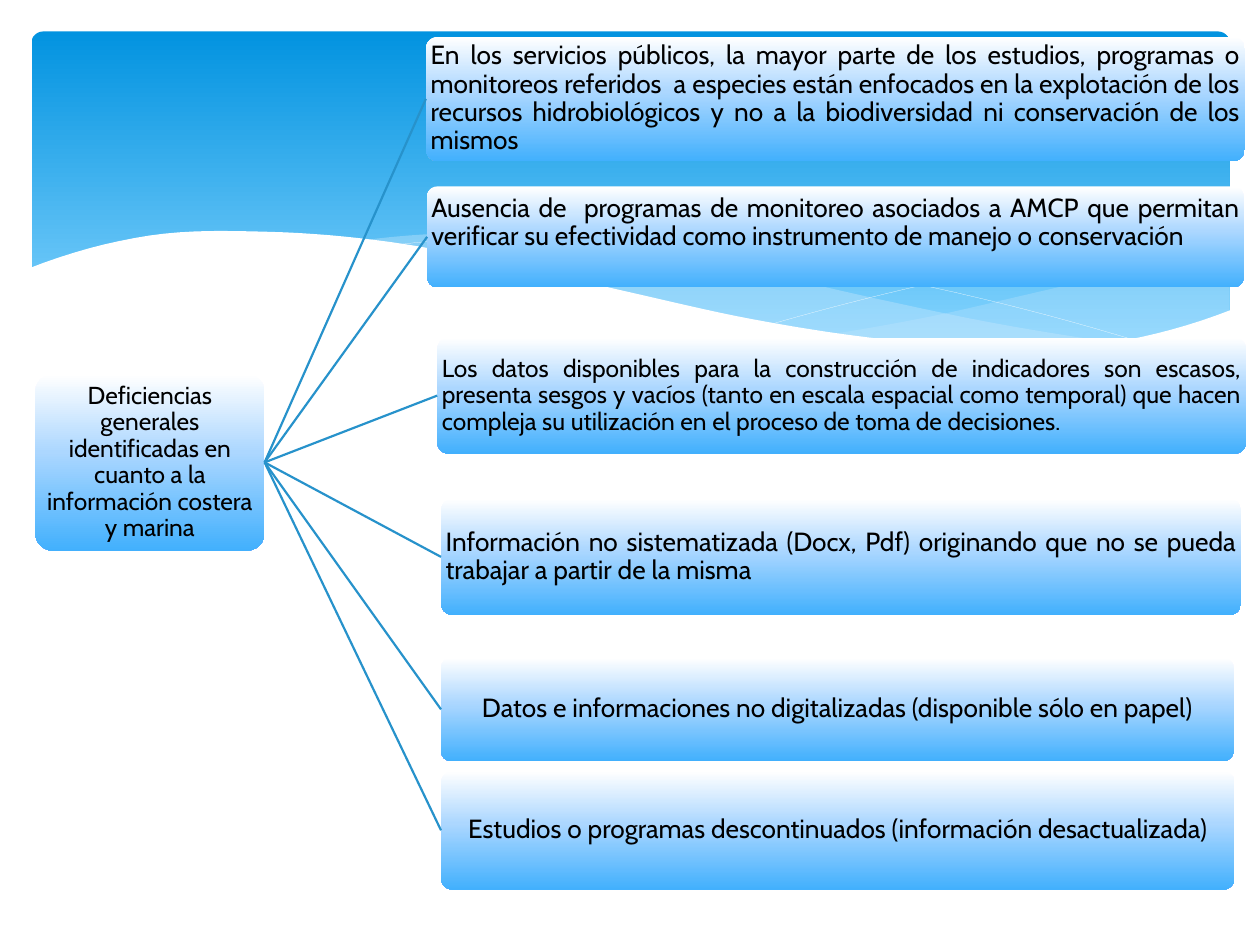
from copy import deepcopy

from lxml.etree import SubElement
from pptx import Presentation
from pptx.dml.color import RGBColor
from pptx.enum.shapes import MSO_CONNECTOR, MSO_SHAPE
from pptx.enum.text import MSO_ANCHOR, PP_ALIGN
from pptx.oxml.ns import qn
from pptx.util import Inches, Pt

THEME = {
    "header": [(0, "0293E0"), (0.9, "83D3FE")],
    "box": [(0, "FFFFFF"), (0.44, "ACD7FF"), (1, "42B0FD")],
    "wave": RGBColor.from_string("C6E7FC"),
    "white": RGBColor.from_string("FFFFFF"),
    "connector": RGBColor.from_string("2792CB"),
    "text": RGBColor.from_string("000000"),
    "font": "Cabin",
    "small": Pt(14),
    "large": Pt(15),
}
RIGHT_SIDE, LEFT_SIDE = 3, 1  # connection sites of a rectangle
STEPS = 8  # short lines drawn between two neighbouring heights of a wave

presentation = Presentation()
presentation.slide_width, presentation.slide_height = Inches(10), Inches(7.5)
slide = presentation.slides.add_slide(presentation.slide_layouts[6])


def add_gradient_box(bounds, corner, stops):
    """Add a rounded rectangle with a gradient running from top to bottom."""
    shape = slide.shapes.add_shape(MSO_SHAPE.ROUNDED_RECTANGLE, *map(Inches, bounds))
    shape.adjustments[0] = corner
    shape.shadow.inherit = False
    shape.line.fill.background()
    shape.fill.gradient()
    shape.fill.gradient_angle = 270
    # A new gradient has two stops: add the missing ones
    stop_list = shape._element.spPr.find(qn("a:gradFill")).find(qn("a:gsLst"))
    for _ in stops[2:]:
        stop_list.append(deepcopy(stop_list[-1]))
    for stop, (position, color) in zip(shape.fill.gradient_stops, stops):
        stop.position = position
        stop.color.rgb = RGBColor.from_string(color)
    return shape


def add_wave(left, right, upper, lower=()):
    """Draw a smooth edge through evenly spaced heights; a lower edge closes it."""
    outline = []
    for heights, start, end in [(upper, left, right), (lower[::-1], right, left)]:
        if not heights:
            continue
        # Extend both ends, so that every interval has a neighbour on each side
        first = 3 * heights[0] - 3 * heights[1] + heights[2] if len(heights) > 2 else heights[0]
        last = 3 * heights[-1] - 3 * heights[-2] + heights[-3] if len(heights) > 2 else heights[-1]
        padded = [first, *heights, last]
        intervals = len(heights) - 1
        for step in range(intervals * STEPS + 1):
            index = min(step // STEPS, intervals - 1)
            t = step / STEPS - index
            a, b, c, d = padded[index:index + 4]
            # Catmull-Rom spline from height b to height c
            y = b + t / 2 * (c - a + t * (2 * a - 5 * b + 4 * c - d + t * (3 * (b - c) + d - a)))
            x = start + (end - start) * step / (intervals * STEPS)
            outline.append((Inches(x), Inches(y)))
    builder = slide.shapes.build_freeform(*outline[0])
    builder.add_line_segments(outline[1:], close=bool(lower))
    shape = builder.convert_to_shape()
    shape.shadow.inherit = False
    if lower:
        shape.line.fill.background()
        shape.fill.solid()
    else:
        shape.fill.background()
    return shape


# Header band
add_gradient_box((0.25, 0.25, 9.51, 2.7), 0.034, THEME["header"])

# Translucent waves: left, right, upper heights, lower heights, opacity in percent
translucent_waves = [
    (6.61, 9.76, [2.65, 2.51, 2.33, 2.15, 2], [2.65, 2.74, 2.78, 2.7, 2.47], 29),
    (2.86, 8.93, [1.91, 1.85, 1.94, 2.13, 2.36, 2.57, 2.73],
     [1.91, 2.08, 2.31, 2.53, 2.7, 2.78, 2.73], 40),
]
for *edges, opacity in translucent_waves:
    wave = add_wave(*edges)
    wave.fill.fore_color.rgb = THEME["wave"]
    color = wave._element.spPr.find(qn("a:solidFill"))[0]
    SubElement(color, qn("a:alpha"), val=str(opacity * 1000))

# Fine white curves, one falling and one rising
fine_curves = [
    (3.09, 9.07, [1.95, 1.88, 2.04, 2.32, 2.72]),
    (6.13, 9.75, [2.57, 2.33, 2.13, 1.95, 1.85]),
]
for edge in fine_curves:
    curve = add_wave(*edge)
    curve.line.color.rgb = THEME["white"]
    curve.line.width = Pt(0.1)

# White wave that cuts the lower edge of the header, down to a flat floor
white_heights = [2.13, 1.87, 1.84, 1.92, 2.1, 2.32, 2.53, 2.68, 2.76, 2.72, 2.46]
white_wave = add_wave(0.23, 9.77, white_heights, [3.29, 3.29])
white_wave.fill.fore_color.rgb = THEME["white"]

# Central topic first, then its deficiencies: bounds, size, alignment, anchor, text
CENTER, JUSTIFY = PP_ALIGN.CENTER, PP_ALIGN.JUSTIFY
MIDDLE, TOP = MSO_ANCHOR.MIDDLE, MSO_ANCHOR.TOP
boxes = [
    ((0.28, 2.97, 1.82, 1.4), "small", CENTER, MIDDLE,
     "Deficiencias generales identificadas en cuanto a la información costera y marina"),
    ((3.38, 0.29, 6.5, 0.99), "large", JUSTIFY, MIDDLE,
     "En los servicios públicos, la mayor parte de los estudios, programas o monitoreos "
     "referidos  a especies están enfocados en la explotación de los recursos "
     "hidrobiológicos y no a la biodiversidad ni conservación de los mismos"),
    ((3.39, 1.48, 6.48, 0.8), "large", JUSTIFY, TOP,
     "Ausencia de  programas de monitoreo asociados a AMCP que permitan verificar su "
     "efectividad como instrumento de manejo o conservación"),
    ((3.47, 2.68, 6.42, 0.92), "small", JUSTIFY, MIDDLE,
     "Los datos disponibles para la construcción de indicadores son escasos, presenta "
     "sesgos y vacíos (tanto en escala espacial como temporal) que hacen compleja su "
     "utilización en el proceso de toma de decisiones."),
    ((3.5, 3.96, 6.35, 0.92), "large", JUSTIFY, MIDDLE,
     "Información no sistematizada (Docx, Pdf) originando que no se pueda trabajar a "
     "partir de la misma"),
    ((3.5, 5.22, 6.29, 0.82), "large", CENTER, MIDDLE,
     "Datos e informaciones no digitalizadas (disponible sólo en papel)"),
    ((3.5, 6.12, 6.3, 0.94), "large", CENTER, MIDDLE,
     "Estudios o programas descontinuados (información desactualizada)"),
]
box_shapes = []
for bounds, size, alignment, anchor, text in boxes:
    box = add_gradient_box(bounds, 0.1, THEME["box"])
    box_shapes.append(box)
    paragraph = box.text_frame.paragraphs[0]
    paragraph.text = text
    font = paragraph.runs[0].font
    font.color.rgb = THEME["text"]
    formats = [
        (box.text_frame, {
            "word_wrap": True, "vertical_anchor": anchor,
            "margin_left": Inches(0.01), "margin_right": Inches(0.01),
            "margin_top": Inches(0.04), "margin_bottom": Inches(0.04),
        }),
        (paragraph, {"alignment": alignment, "line_spacing": 0.9}),
        (font, {"name": THEME["font"], "size": THEME[size]}),
    ]
    for target, values in formats:
        for name, value in values.items():
            setattr(target, name, value)

# Lines from the topic to each deficiency
topic, *deficiencies = box_shapes
for deficiency in deficiencies:
    connector = slide.shapes.add_connector(MSO_CONNECTOR.STRAIGHT, 0, 0, 0, 0)
    connector.begin_connect(topic, RIGHT_SIDE)
    connector.end_connect(deficiency, LEFT_SIDE)
    connector.line.color.rgb = THEME["connector"]
    connector.line.width = Pt(1.25)
    SubElement(connector._element.spPr, qn("a:effectLst"))

presentation.save("out.pptx")
